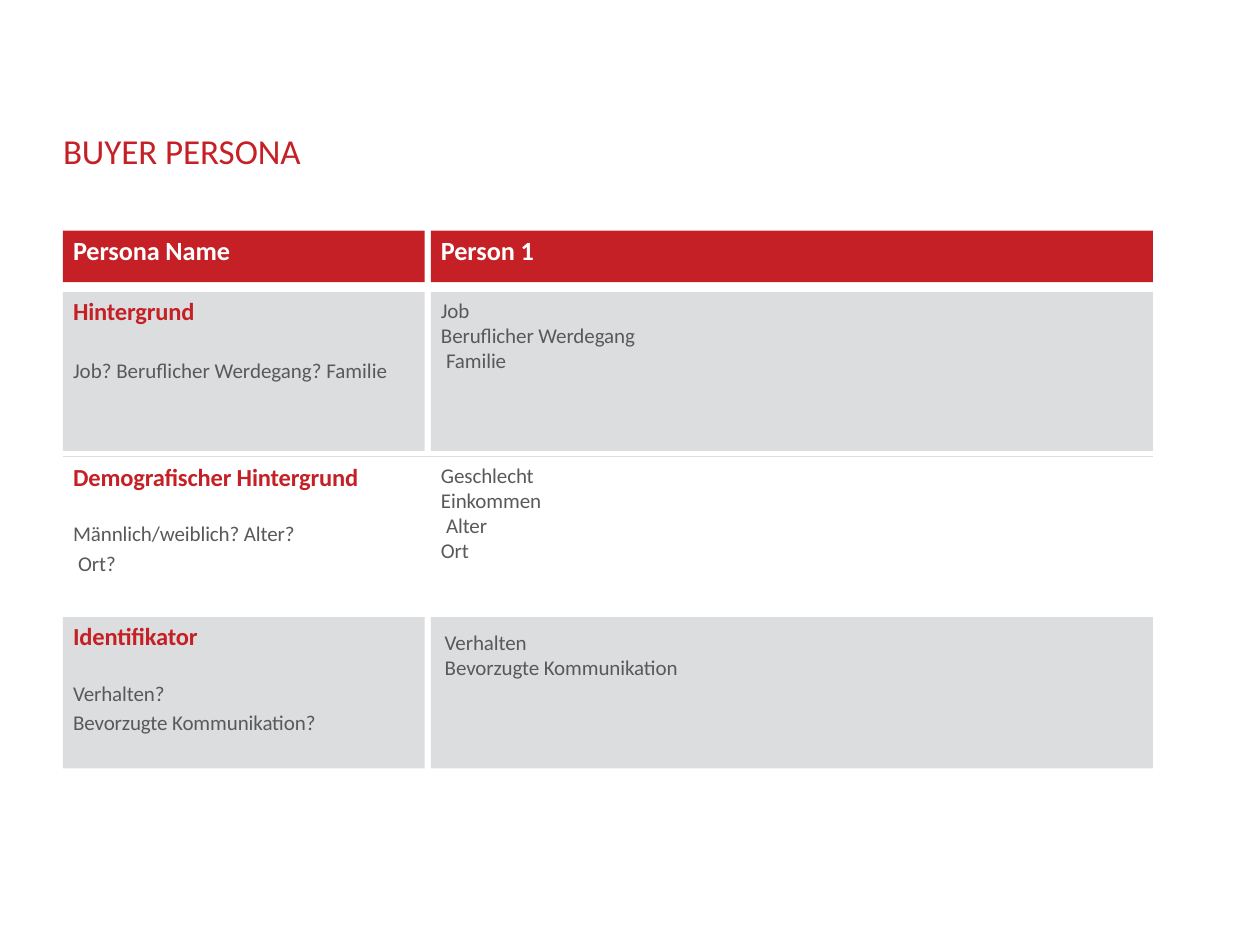
import pptx
import pptx.util
import pptx.dml.color
import pptx.enum.shapes
import pptx.enum.text
import pptx.oxml
import pptx.oxml.ns
from dataclasses import dataclass

Inches = pptx.util.Inches
Pt = pptx.util.Pt
RGBColor = pptx.dml.color.RGBColor

RED = RGBColor(0xC5, 0x20, 0x26)
GRAY = RGBColor(0xDC, 0xDD, 0xDE)
TEXT = RGBColor(0x58, 0x59, 0x5B)
WHITE = RGBColor(0xFF, 0xFF, 0xFF)

# The page measures 720 by 539 points
PAGE_WIDTH = Inches(720 / 72)
PAGE_HEIGHT = Inches(539 / 72)

# Columns as (left, width), rows as (top, height), in inches
LABEL_COLUMN = (0.5, 2.87)
DETAIL_COLUMN = (3.42, 5.73)
HEADER_ROW = (1.83, 0.41)
BACKGROUND_ROW = (2.32, 1.26)
DEMOGRAPHIC_ROW = (3.62, 1.2)
IDENTIFIER_ROW = (4.9, 1.2)
PADDING = 0.08


@dataclass
class Line:
    text: str
    size: float = 12
    color: RGBColor = TEXT
    bold: bool = False
    before: float = 0
    indent: float = 0
    spacing: float = 1.0
    tracking: int = -5


def cell_box(column, row):
    return (column[0], row[0], column[1], row[1])


def write_lines(shape, lines, top_inset):
    frame = shape.text_frame
    frame.word_wrap = True
    frame.vertical_anchor = pptx.enum.text.MSO_ANCHOR.TOP
    frame.margin_left = frame.margin_right = frame.margin_bottom = 0
    frame.margin_top = Inches(top_inset)
    frame.text = "\n".join(line.text for line in lines)
    for paragraph, line in zip(frame.paragraphs, lines):
        paragraph.alignment = pptx.enum.text.PP_ALIGN.LEFT
        paragraph.space_before = Pt(line.before)
        paragraph.line_spacing = line.spacing
        paragraph._p.get_or_add_pPr().set("marL", str(Inches(line.indent)))
        for run in paragraph.runs:
            run.font.name = "Calibri"
            run.font.size = Pt(line.size)
            run.font.bold = line.bold
            run.font.color.rgb = line.color
            run._r.get_or_add_rPr().set("spc", str(line.tracking))


def add_panel(slide, box, color, lines=(), top_inset=0.03):
    shape = slide.shapes.add_shape(
        pptx.enum.shapes.MSO_SHAPE.RECTANGLE, *map(Inches, box))
    shape.shadow.inherit = False
    shape.fill.solid()
    shape.fill.fore_color.rgb = color
    shape.line.fill.background()
    if lines:
        write_lines(shape, lines, top_inset)


def add_text(slide, box, lines):
    write_lines(slide.shapes.add_textbox(*map(Inches, box)), lines, 0.01)


def heading(text, before=1, indent=0):
    return Line(text, 14, RED, True, before, indent, tracking=-10)


def add_header(slide, row):
    for column, text in ((LABEL_COLUMN, "Persona Name"), (DETAIL_COLUMN, "Person 1")):
        add_panel(slide, cell_box(column, row), RED,
                  [Line(text, 15, WHITE, True, 1.9, PADDING)])


def add_background(slide, row):
    left, top, width, height = cell_box(LABEL_COLUMN, row)
    add_panel(slide, (left, top, width, height), GRAY)
    text_width = width - PADDING
    add_text(slide, (left + PADDING, top + 0.02, text_width, 0.26),
             [heading("Hintergrund")])
    add_text(slide, (left + PADDING, top + 0.51, text_width, 0.23),
             [Line("Job? Beruflicher Werdegang? Familie", before=1, tracking=0)])
    add_panel(slide, cell_box(DETAIL_COLUMN, row), GRAY,
              [Line("Job", before=2.6, indent=PADDING),
               Line("Beruflicher Werdegang", indent=PADDING),
               Line("Familie", indent=0.12)], 0.04)


def add_demographics(slide, row):
    left, top, width, height = cell_box(LABEL_COLUMN, row)
    detail_left, detail_width = DETAIL_COLUMN

    # Hairline above the row
    rule = slide.shapes.add_connector(
        pptx.enum.shapes.MSO_CONNECTOR.STRAIGHT, Inches(left), Inches(top),
        Inches(detail_left + detail_width), Inches(top))
    rule.line.color.rgb = GRAY
    rule.line.width = Pt(0.5)
    rule._element.spPr.append(
        pptx.oxml.parse_xml(f"<a:effectLst {pptx.oxml.ns.nsdecls('a')}/>"))

    # Label and questions
    text_width = 2.32
    add_text(slide, (left + PADDING, top + 0.04, text_width, 0.26),
             [heading("Demografischer Hintergrund")])
    add_text(slide, (left + PADDING, top + 0.47, text_width, 0.49),
             [Line("Männlich/weiblich? Alter?", before=1, spacing=1.17),
              Line("Ort?", indent=0.04, spacing=1.17)])

    # Details
    add_text(slide, (detail_left + PADDING, top + 0.04, 0.9, 0.83),
             [Line("Geschlecht", before=1), Line("Einkommen"),
              Line("Alter", indent=0.04), Line("Ort")])


def add_identifier(slide, row):
    add_panel(slide, cell_box(LABEL_COLUMN, row), GRAY,
              [heading("Identifikator", 2.1, PADDING),
               Line("Verhalten?", before=17.3, indent=PADDING),
               Line("Bevorzugte Kommunikation?", before=2.4, indent=PADDING)])
    add_panel(slide, cell_box(DETAIL_COLUMN, row), GRAY,
              [Line("Verhalten", before=6.9, indent=0.11),
               Line("Bevorzugte Kommunikation", indent=0.11)], 0.1)


def main():
    presentation = pptx.Presentation()
    presentation.slide_width = PAGE_WIDTH
    presentation.slide_height = PAGE_HEIGHT
    slide = presentation.slides.add_slide(presentation.slide_layouts[6])

    add_text(slide, (0.5, 1.02, 1.92, 0.36),
             [Line("BUYER PERSONA", 20, RED, before=1)])
    add_header(slide, HEADER_ROW)
    add_background(slide, BACKGROUND_ROW)
    add_demographics(slide, DEMOGRAPHIC_ROW)
    add_identifier(slide, IDENTIFIER_ROW)

    presentation.save("out.pptx")


if __name__ == "__main__":
    main()
